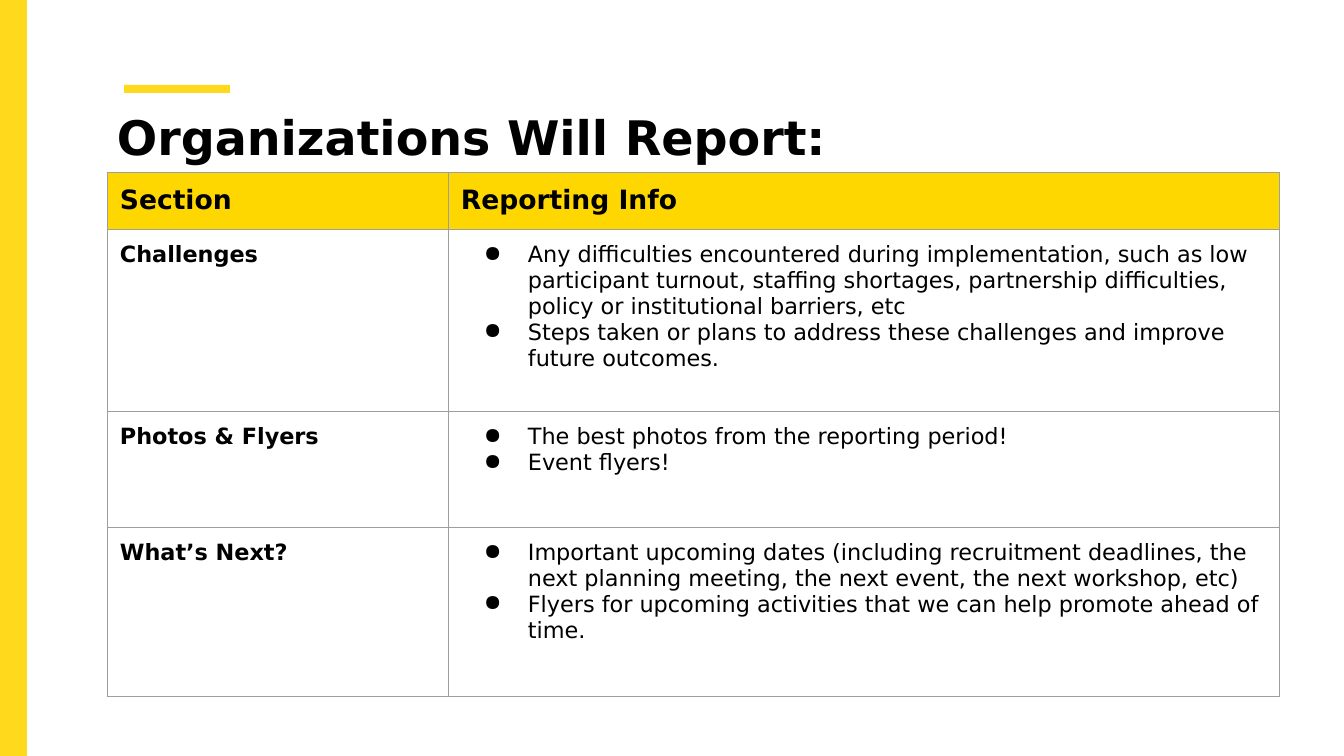
from lxml.etree import SubElement
from pptx import Presentation
from pptx.dml.color import RGBColor
from pptx.enum.shapes import MSO_SHAPE
from pptx.enum.text import MSO_ANCHOR, MSO_AUTO_SIZE, PP_ALIGN
from pptx.oxml import parse_xml
from pptx.oxml.ns import nsdecls, qn
from pptx.util import Emu, Pt

COLORS = {
    "accent": "FFD91C",
    "header": "FFD700",
    "text": "000000",
    "cell": "FFFFFF",
    "border": "9E9E9E",
}
FONT = "DejaVu Sans"
TITLE_ONLY = 5

HEADINGS = ("Section", "Reporting Info")
SECTIONS = [
    ("Challenges", [
        "Any difficulties encountered during implementation, such as low participant turnout, "
        "staffing shortages, partnership difficulties, policy or institutional barriers, etc",
        "Steps taken or plans to address these challenges and improve future outcomes.",
    ]),
    ("Photos & Flyers", [
        "The best photos from the reporting period!",
        "Event flyers!",
    ]),
    ("What’s Next?", [
        "Important upcoming dates (including recruitment deadlines, the next planning meeting, "
        "the next event, the next workshop, etc)",
        "Flyers for upcoming activities that we can help promote ahead of time.",
    ]),
]


def px(length):
    return Emu(round(length * 914400 / 100.8))


def color(name):
    return RGBColor.from_string(COLORS[name])


class ReportSlide:
    def __init__(self, deck):
        self.slide = deck.slides.add_slide(deck.slide_layouts[TITLE_ONLY])

    def style(self, paragraph, size, bold):
        paragraph.alignment = PP_ALIGN.LEFT
        font = paragraph.font
        font.name, font.size, font.bold = FONT, Pt(size), bold
        font.color.rgb = color("text")

    def bar(self, *box):
        bar = self.slide.shapes.add_shape(MSO_SHAPE.RECTANGLE, *map(px, box))
        bar.shadow.inherit = False
        bar.fill.solid()
        bar.fill.fore_color.rgb = color("accent")
        bar.line.fill.background()

    def title(self, text, *box):
        title = self.slide.shapes.title
        title.left, title.top, title.width, title.height = map(px, box)
        frame = title.text_frame
        frame.text = text
        frame.word_wrap = True
        frame.auto_size = MSO_AUTO_SIZE.NONE
        frame.vertical_anchor = MSO_ANCHOR.TOP
        frame.margin_left = frame.margin_right = px(10)
        frame.margin_top = px(9)
        self.style(frame.paragraphs[0], 34, True)

    def bullet(self, paragraph):
        properties = paragraph._p.get_or_add_pPr()
        properties.set("marL", str(px(67)))
        properties.set("indent", str(px(-44)))
        bullet_color = SubElement(properties, qn("a:buClr"))
        SubElement(bullet_color, qn("a:srgbClr"), val=COLORS["text"])
        SubElement(properties, qn("a:buChar"), char="●")

    def cell(self, cell, lines, fill, size, bold, bulleted=False):
        cell.fill.solid()
        cell.fill.fore_color.rgb = color(fill)
        cell.margin_left = cell.margin_right = px(13)
        cell.margin_top = cell.margin_bottom = px(13)
        cell.text = "\n".join(lines)
        for paragraph in cell.text_frame.paragraphs:
            if bulleted:
                self.bullet(paragraph)
            self.style(paragraph, size, bold)
        properties = cell._tc.get_or_add_tcPr()
        for position, side in enumerate("LRTB"):
            properties.insert(position, parse_xml(
                f'<a:ln{side} {nsdecls("a")} w="{Pt(0.75)}"><a:solidFill>'
                f'<a:srgbClr val="{COLORS["border"]}"/></a:solidFill></a:ln{side}>'))

    def table(self, left, top, widths, heights):
        frame = self.slide.shapes.add_table(
            len(heights), len(widths), px(left), px(top), px(sum(widths)), px(sum(heights)))
        table = frame.table
        table.first_row = table.horz_banding = False
        for column, width in zip(table.columns, widths):
            column.width = px(width)
        for row, height in zip(table.rows, heights):
            row.height = px(height)
        for index, heading in enumerate(HEADINGS):
            self.cell(table.cell(0, index), [heading], "header", 19, True)
        for index, (section, details) in enumerate(SECTIONS, 1):
            self.cell(table.cell(index, 0), [section], "cell", 16, True)
            self.cell(table.cell(index, 1), details, "cell", 16, False, bulleted=True)


def main():
    deck = Presentation()
    deck.slide_width, deck.slide_height = px(1344), px(756)
    report = ReportSlide(deck)
    report.bar(0, 0, 27, 756)
    report.bar(124, 85, 106, 8)
    report.title("Organizations Will Report:", 107, 99, 1115, 81)
    report.table(107, 172, (341, 832), (57, 182, 116, 170))
    deck.save("out.pptx")


if __name__ == "__main__":
    main()
